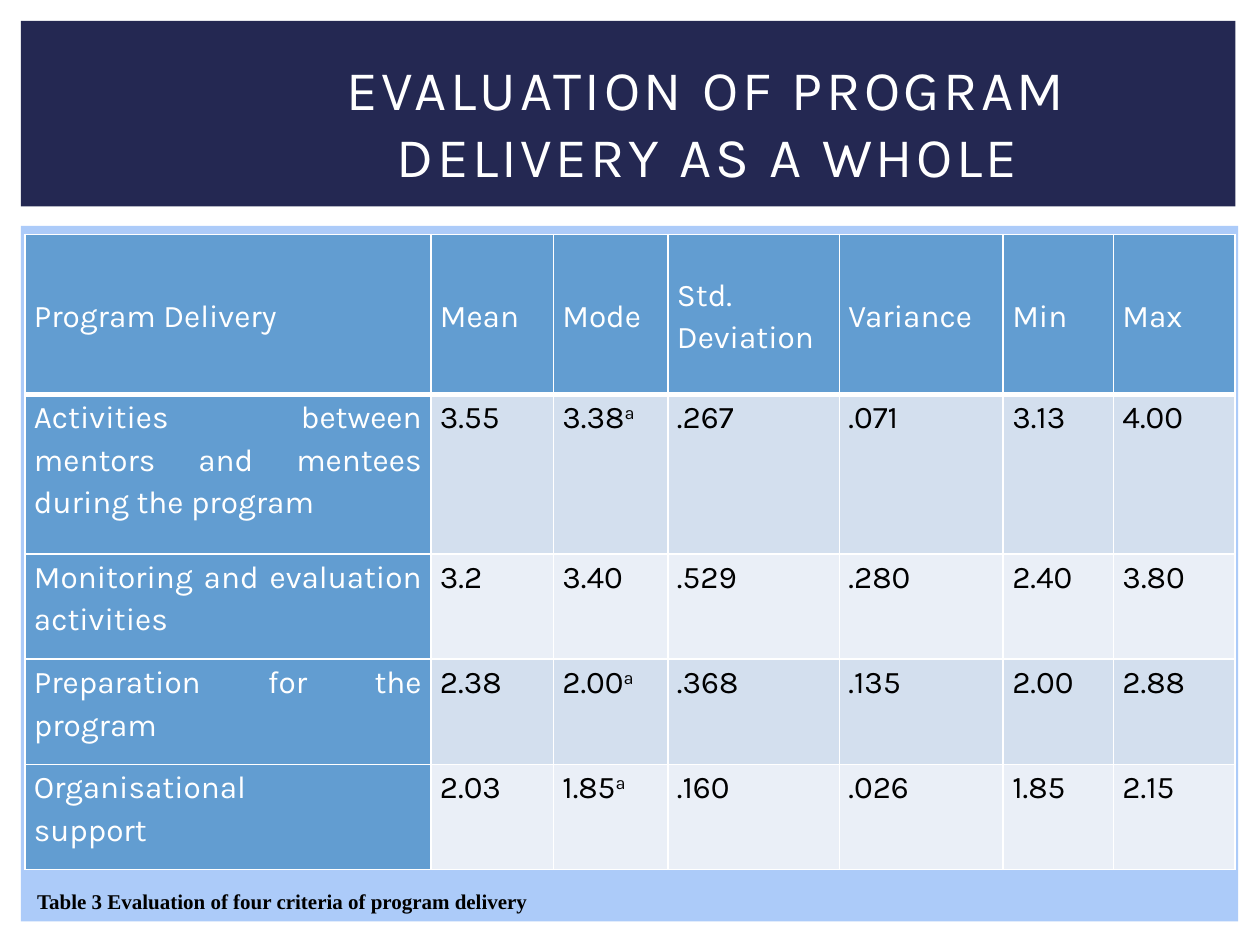
"""Build the slide on the evaluation of program delivery."""
from lxml import etree
from pptx import Presentation
from pptx import util as u
from pptx.dml.color import RGBColor
from pptx.enum import shapes, text
from pptx.oxml.ns import qn

TITLE = "EVALUATION OF PROGRAM DELIVERY AS A WHOLE"
CAPTION = "Table 3 Evaluation of four criteria of program delivery"
HEADER = ["Program Delivery", "Mean", "Mode", "Std. Deviation", "Variance", "Min", "Max"]
CRITERIA = [
    ["Activities between mentors and mentees during the program",
     "3.55", "3.38^a", ".267", ".071", "3.13", "4.00"],
    ["Monitoring and evaluation activities",
     "3.2", "3.40", ".529", ".280", "2.40", "3.80"],
    ["Preparation for the program",
     "2.38", "2.00^a", ".368", ".135", "2.00", "2.88"],
    ["Organisational\nsupport",
     "2.03", "1.85^a", ".160", ".026", "1.85", "2.15"],
]
COLUMN_WIDTHS = [232, 70, 65.5, 98, 93.6, 63, 69.6]
ROW_HEIGHTS = [91.3, 91.3, 60.1, 60.1, 60.1]

THEME = {
    "panel": "ACCBF9", "banner": "242852", "accent": "629DD1",
    "bands": ["D3DFEE", "EAEFF7"], "light": "FFFFFF", "dark": "000000",
    "font": "Karla", "caption_font": "Times New Roman",
    "title_size": 32, "table_size": 18, "caption_size": 12,
}


def format_span(span, font, size, color, bold=False):
    span.font.name = font
    span.font.size = u.Pt(size)
    span.font.bold = bold
    span.font.color.rgb = RGBColor.from_string(color)


def add_block(page, color, *place):
    block = page.shapes.add_shape(shapes.MSO_SHAPE.RECTANGLE, *map(u.Pt, place))
    block.shadow.inherit = False
    block.fill.solid()
    block.fill.fore_color.rgb = RGBColor.from_string(color)
    block.line.fill.background()


def add_title(page):
    title = page.shapes.title
    title.element.getparent().append(title.element)
    title.left, title.top, title.width, title.height = map(u.Pt, (118.8, 28, 571, 82.8))
    frame = title.text_frame
    frame.text = TITLE
    frame.word_wrap = True
    frame.auto_size = text.MSO_AUTO_SIZE.NONE
    frame.vertical_anchor = text.MSO_ANCHOR.MIDDLE
    para = frame.paragraphs[0]
    para.alignment = text.PP_ALIGN.CENTER
    span = para.runs[0]
    format_span(span, THEME["font"], THEME["title_size"], THEME["light"])
    span.font._element.set("spc", "200")


def set_borders(cell, widths):
    properties = cell._tc.get_or_add_tcPr()
    for side, width in widths.items():
        line = etree.SubElement(properties, qn(f"a:ln{side}"), w=str(u.Pt(width)))
        fill = etree.SubElement(line, qn("a:solidFill"))
        etree.SubElement(fill, qn("a:srgbClr"), val=THEME["light"])


def fill_cell(cell, content, row, column):
    is_label = row == 0 or column == 0
    set_borders(cell, {"L": 1, "R": 1, "T": 3 if row == 1 else 1, "B": 3 if row == 0 else 1})
    cell.fill.solid()
    fill = THEME["accent"] if is_label else THEME["bands"][(row - 1) % 2]
    cell.fill.fore_color.rgb = RGBColor.from_string(fill)
    cell.margin_left = cell.margin_right = u.Pt(5.2)
    cell.margin_top = cell.margin_bottom = 0
    cell.vertical_anchor = text.MSO_ANCHOR.MIDDLE if row == 0 else text.MSO_ANCHOR.TOP
    value, _, mark = content.partition("^")
    cell.text_frame.text = value
    if mark:
        note = cell.text_frame.paragraphs[0].add_run()
        note.text = mark
        note.font._element.set("baseline", "30000")
    for para in cell.text_frame.paragraphs:
        para.alignment = text.PP_ALIGN.JUSTIFY
        para.line_spacing = 1.15
        for span in para.runs:
            format_span(span, THEME["font"], THEME["table_size"],
                        THEME["light"] if is_label else THEME["dark"])


def add_results(page):
    rows = [HEADER, *CRITERIA]
    table = page.shapes.add_table(
        len(rows), len(HEADER), u.Pt(14.2), u.Pt(134),
        u.Pt(sum(COLUMN_WIDTHS)), u.Pt(sum(ROW_HEIGHTS))).table
    table.first_row = table.horz_banding = False
    for column, width in zip(table.columns, COLUMN_WIDTHS):
        column.width = u.Pt(width)
    for row, height in zip(table.rows, ROW_HEIGHTS):
        row.height = u.Pt(height)
    for r, contents in enumerate(rows):
        for c, content in enumerate(contents):
            fill_cell(table.cell(r, c), content, r, c)


def add_caption(page):
    box = page.shapes.add_textbox(*map(u.Pt, (14.2, 497, 690, 36)))
    frame = box.text_frame
    frame.text = CAPTION
    frame.word_wrap = True
    frame.vertical_anchor = text.MSO_ANCHOR.MIDDLE
    format_span(frame.paragraphs[0].runs[0], THEME["caption_font"],
                THEME["caption_size"], THEME["dark"], bold=True)


def main():
    deck = Presentation()
    deck.slide_width, deck.slide_height = u.Pt(720), u.Pt(540)
    page = deck.slides.add_slide(deck.slide_layouts[5])
    add_block(page, THEME["panel"], 12, 129, 695.5, 397.5)
    add_block(page, THEME["banner"], 12, 12, 694, 106)
    add_title(page)
    add_results(page)
    add_caption(page)
    deck.save("out.pptx")


if __name__ == "__main__":
    main()
